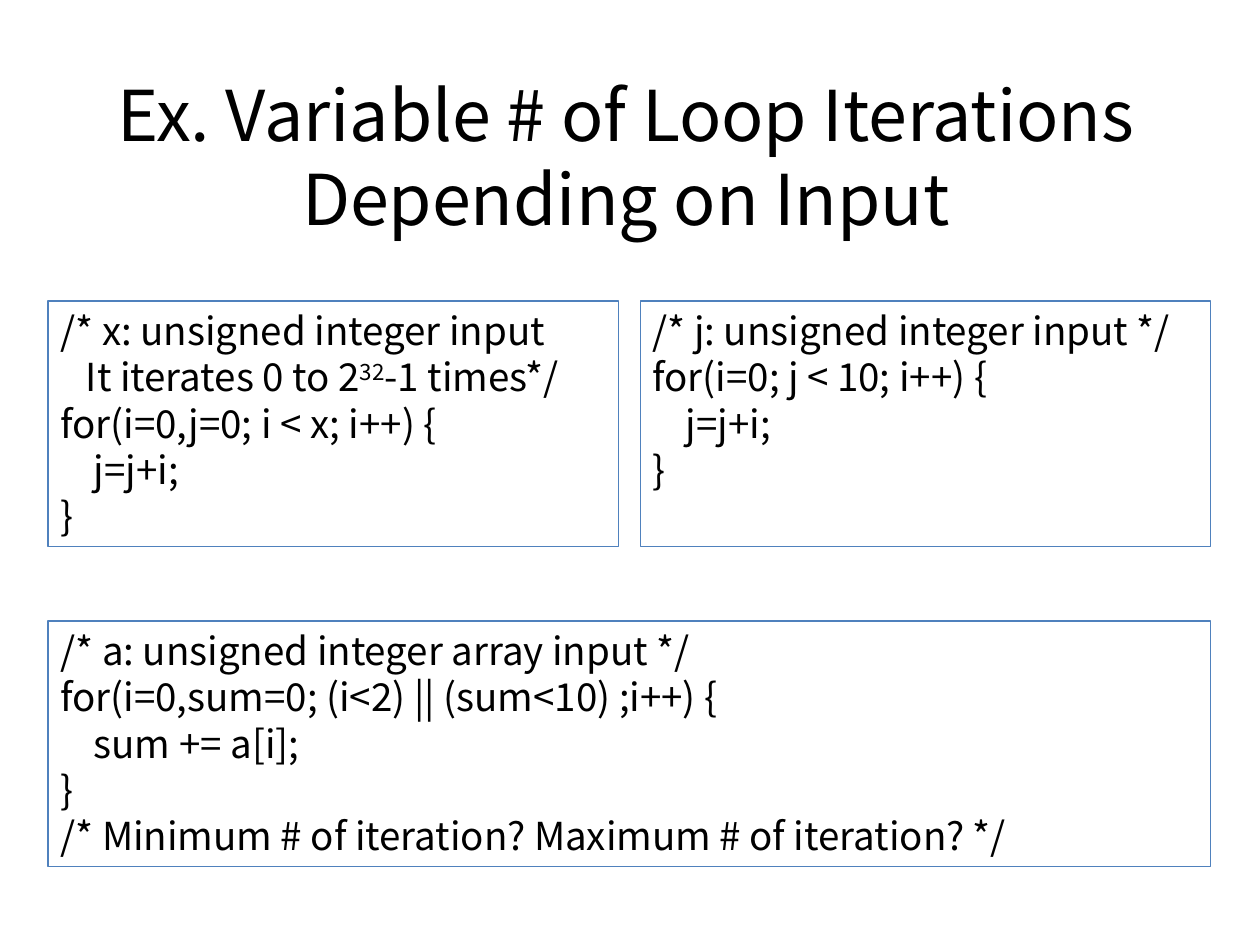
from pptx import Presentation
from pptx.dml.color import RGBColor
from pptx.enum.shapes import MSO_SHAPE
from pptx.enum.text import MSO_ANCHOR, PP_ALIGN
from pptx.util import Cm, Pt

RECTANGLE = MSO_SHAPE.RECTANGLE
TOP, MIDDLE = MSO_ANCHOR.TOP, MSO_ANCHOR.MIDDLE
LEFT, CENTER = PP_ALIGN.LEFT, PP_ALIGN.CENTER

BLACK = RGBColor(0x00, 0x00, 0x00)
BORDER_BLUE = RGBColor(0x4F, 0x81, 0xBD)
FONT_NAME = "Noto Sans CJK KR"
TITLE_LAYOUT = 5

MARGIN, GAP = 0.97, 0.43
FULL_WIDTH = 23.44
HALF_WIDTH = (FULL_WIDTH - GAP) / 2
BOX_HEIGHT = 4.95
UPPER_ROW, LOWER_ROW = 6.07, 12.52
COMMENT_INDENT, CODE_INDENT = 0.51, 0.67

INPUT_BOUND = [
    (0, ["/* x: unsigned integer input"]),
    (COMMENT_INDENT, ["It iterates 0 to 2", "32", "-1 times*/"]),
    (0, ["for(i=0,j=0; i < x; i++) {"]),
    (CODE_INDENT, ["j=j+i;"]),
    (0, ["}"]),
]
INPUT_START = [
    (0, ["/* j: unsigned integer input */"]),
    (0, ["for(i=0; j < 10; i++) {"]),
    (CODE_INDENT, ["j=j+i;"]),
    (0, ["}"]),
]
INPUT_ARRAY = [
    (0, ["/* a: unsigned integer array input */"]),
    (0, ["for(i=0,sum=0; (i<2) || (sum<10) ;i++) {"]),
    (CODE_INDENT, ["sum += a[i];"]),
    (0, ["}"]),
    (0, ["/* Minimum # of iteration? Maximum # of iteration? */"]),
]


def format_paragraph(paragraph, size, spacing, alignment):
    """Set the font, line spacing and alignment of a paragraph."""
    paragraph.alignment = alignment
    paragraph.line_spacing = Pt(spacing)
    paragraph.font.name = FONT_NAME
    paragraph.font.size = Pt(size)
    paragraph.font.color.rgb = BLACK


def set_title(slide, text):
    """Place and format the title placeholder."""
    title = slide.shapes.title
    title.left, title.top = Cm(1.19), Cm(1.55)
    title.width, title.height = Cm(22.86), Cm(3.18)
    title.text_frame.text = text
    title.text_frame.vertical_anchor = MIDDLE
    format_paragraph(title.text_frame.paragraphs[0], 40, 48, CENTER)


def write_code_line(paragraph, indent, parts):
    """Write an indented line whose every second part is superscript."""
    format_paragraph(paragraph, 22, 26.4, LEFT)
    paragraph._p.get_or_add_pPr().set("marL", str(Cm(indent)))
    for position, part in enumerate(parts):
        run = paragraph.add_run()
        run.text = part
        if position % 2:
            run._r.get_or_add_rPr().set("baseline", "30000")


def add_code_box(slide, left, top, width, lines):
    """Add an outlined box that holds lines of code."""
    box = slide.shapes.add_shape(
        RECTANGLE, Cm(left), Cm(top), Cm(width), Cm(BOX_HEIGHT)
    )
    box.shadow.inherit = False
    box.fill.background()
    box.line.color.rgb = BORDER_BLUE
    box.line.width = Pt(0.75)
    frame = box.text_frame
    frame.word_wrap = True
    frame.vertical_anchor = TOP
    for position, (indent, parts) in enumerate(lines):
        paragraph = frame.add_paragraph() if position else frame.paragraphs[0]
        write_code_line(paragraph, indent, parts)


def main():
    """Build the slide and save it."""
    presentation = Presentation()
    presentation.slide_width, presentation.slide_height = Cm(25.4), Cm(19.05)
    slide = presentation.slides.add_slide(presentation.slide_layouts[TITLE_LAYOUT])
    set_title(slide, "Ex. Variable # of Loop Iterations Depending on Input")
    add_code_box(slide, MARGIN, UPPER_ROW, HALF_WIDTH, INPUT_BOUND)
    add_code_box(slide, MARGIN + HALF_WIDTH + GAP, UPPER_ROW, HALF_WIDTH, INPUT_START)
    add_code_box(slide, MARGIN, LOWER_ROW, FULL_WIDTH, INPUT_ARRAY)
    presentation.save("out.pptx")


if __name__ == "__main__":
    main()
